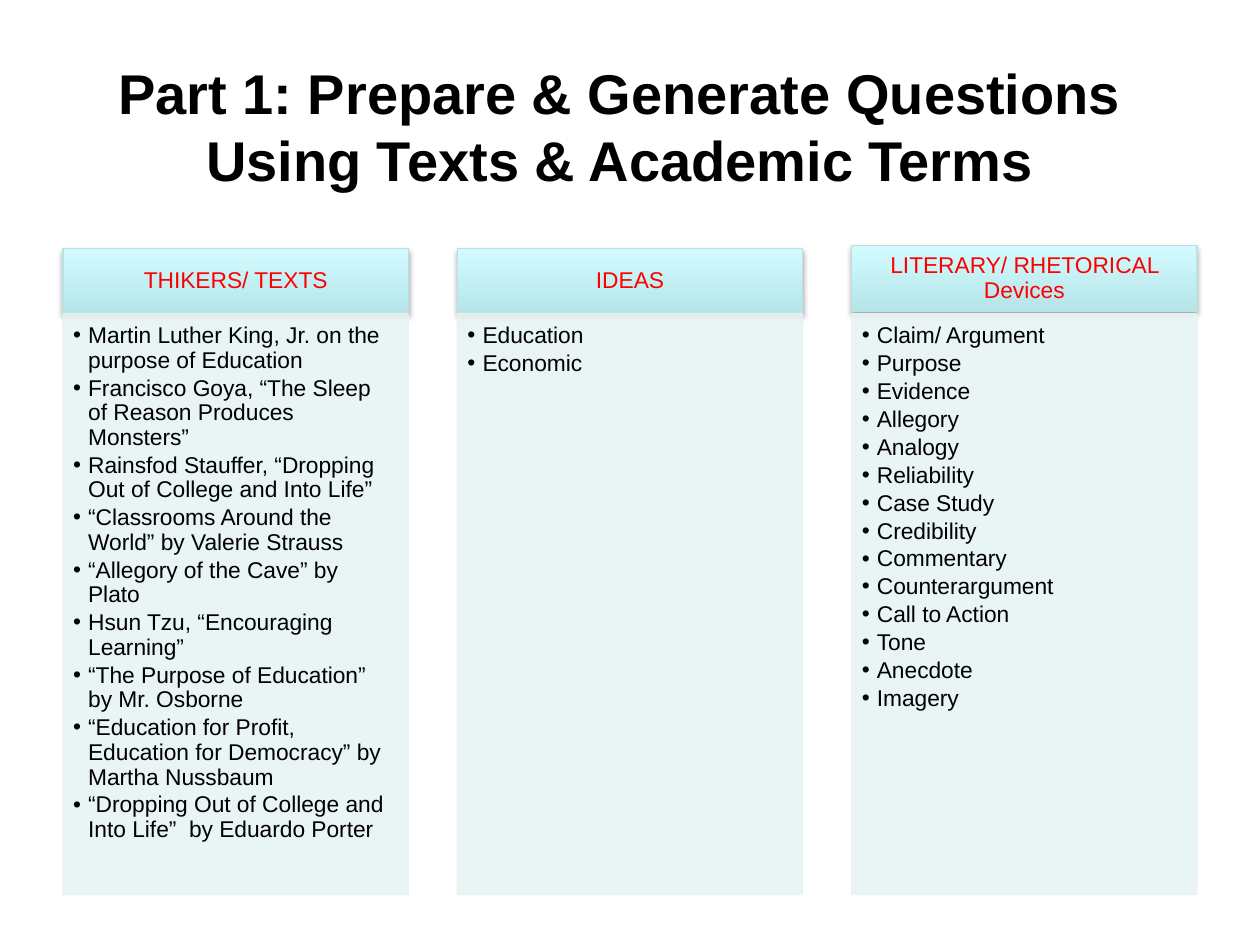
"""Build a slide with a title and three headed lists of texts, ideas and devices."""
import lxml.etree
import pptx
import pptx.dml.color
import pptx.enum.shapes
import pptx.enum.text
import pptx.oxml
import pptx.oxml.ns
import pptx.util

TITLE = "Part 1: Prepare & Generate Questions Using Texts & Academic Terms"
COLUMNS = [
    ("THIKERS/ TEXTS", 1.97, [
        "Martin Luther King, Jr. on the purpose of Education",
        "Francisco Goya, “The Sleep of Reason Produces Monsters”",
        "Rainsfod Stauffer, “Dropping Out of College and Into Life”",
        "“Classrooms Around the World” by Valerie Strauss",
        "“Allegory of the Cave” by Plato",
        "Hsun Tzu, “Encouraging Learning”",
        "“The Purpose of Education” by Mr. Osborne",
        "“Education for Profit, Education for Democracy” by Martha Nussbaum",
        "“Dropping Out of College and Into Life”  by Eduardo Porter",
    ]),
    ("IDEAS", 1.97, ["Education", "Economic"]),
    ("LITERARY/ RHETORICAL Devices", 1.95, [
        "Claim/ Argument", "Purpose", "Evidence", "Allegory", "Analogy",
        "Reliability", "Case Study", "Credibility", "Commentary",
        "Counterargument", "Call to Action", "Tone", "Anecdote", "Imagery",
    ]),
]
LEFT, PITCH, WIDTH = 0.5, 3.13, 2.74
HEADER_HEIGHT, LIST_TOP, LIST_HEIGHT = 0.52, 2.49, 4.61
ANCHOR = pptx.enum.text.MSO_ANCHOR
CENTER = pptx.enum.text.PP_ALIGN.CENTER


def rgb(value):
    return pptx.dml.color.RGBColor.from_string(value)


def qualified(tag):
    return pptx.oxml.ns.qn(tag)


def set_font(para, size, color, bold=False):
    para.font.name, para.font.size = "Arial", pptx.util.Pt(size)
    para.font.color.rgb, para.font.bold = rgb(color), bold


def place(shape, *bounds):
    shape.left, shape.top, shape.width, shape.height = map(pptx.util.Inches, bounds)


def add_box(page, bounds, line_color, insets, anchor):
    box = page.shapes.add_shape(
        pptx.enum.shapes.MSO_SHAPE.RECTANGLE, *map(pptx.util.Inches, bounds))
    box.shadow.inherit = False
    box.line.color.rgb, box.line.width = rgb(line_color), pptx.util.Pt(0.75)
    frame = box.text_frame
    frame.word_wrap, frame.vertical_anchor = True, anchor
    (frame.margin_left, frame.margin_top,
     frame.margin_right, frame.margin_bottom) = map(pptx.util.Inches, insets)
    return box


def add_shadow(box):
    effects = box.element.spPr.find(qualified("a:effectLst"))
    effects.append(pptx.oxml.parse_xml(
        f'<a:outerShdw {pptx.oxml.ns.nsdecls("a")} blurRad="{pptx.util.Pt(3.1)}" '
        f'dist="{pptx.util.Pt(1.8)}" dir="5400000" rotWithShape="0">'
        '<a:srgbClr val="000000"><a:alpha val="35000"/></a:srgbClr></a:outerShdw>'))


def add_header(page, text, bounds):
    box = add_box(page, bounds, "BBE0E3", (0.1, 0.06, 0.1, 0.06), ANCHOR.MIDDLE)
    box.fill.gradient()
    box.fill.gradient_angle = 90
    for stop, color in zip(box.fill.gradient_stops, ("B5E5E9", "D3FBFF")):
        stop.color.rgb = rgb(color)
    add_shadow(box)
    para = box.text_frame.paragraphs[0]
    para.text, para.alignment, para.line_spacing = text, CENTER, 0.9
    set_font(para, 13, "FF0000")


def add_list(page, items, bounds):
    box = add_box(page, bounds, "E7F3F4", (0.08, 0.08, 0.15, 0.11), ANCHOR.TOP)
    box.fill.solid()
    box.fill.fore_color.rgb = rgb("E7F3F4")
    for color in box.element.spPr.iter(qualified("a:srgbClr")):
        lxml.etree.SubElement(color, qualified("a:alpha"), val="90000")
    box.text_frame.text = "\n".join(items)
    for para in box.text_frame.paragraphs:
        para.alignment = pptx.enum.text.PP_ALIGN.LEFT
        para.line_spacing, para.space_after = 0.9, pptx.util.Pt(1.9)
        set_font(para, 13, "000000")
        properties = para._p.get_or_add_pPr()
        indent = pptx.util.Inches(0.12)
        properties.set("marL", str(indent))
        properties.set("indent", str(-indent))
        lxml.etree.SubElement(properties, qualified("a:buFont"), typeface="Arial")
        lxml.etree.SubElement(properties, qualified("a:buChar"), char="•")
        properties.append(properties.find(qualified("a:defRPr")))


def main():
    deck = pptx.Presentation()
    deck.slide_width, deck.slide_height = pptx.util.Inches(10), pptx.util.Inches(7.5)
    page = deck.slides.add_slide(deck.slide_layouts[5])
    title = page.shapes.title
    place(title, 0.67, 0.58, 8.5, 0.83)
    title.text = TITLE
    title.text_frame.auto_size = pptx.enum.text.MSO_AUTO_SIZE.NONE
    title.text_frame.vertical_anchor = ANCHOR.MIDDLE
    title.text_frame.paragraphs[0].alignment = CENTER
    set_font(title.text_frame.paragraphs[0], 32, "000000", bold=True)
    for index, (heading, top, items) in enumerate(COLUMNS):
        left = LEFT + index * PITCH
        add_header(page, heading, (left, top, WIDTH, HEADER_HEIGHT))
        add_list(page, items, (left, LIST_TOP, WIDTH, LIST_HEIGHT))
    deck.save("out.pptx")


if __name__ == "__main__":
    main()
